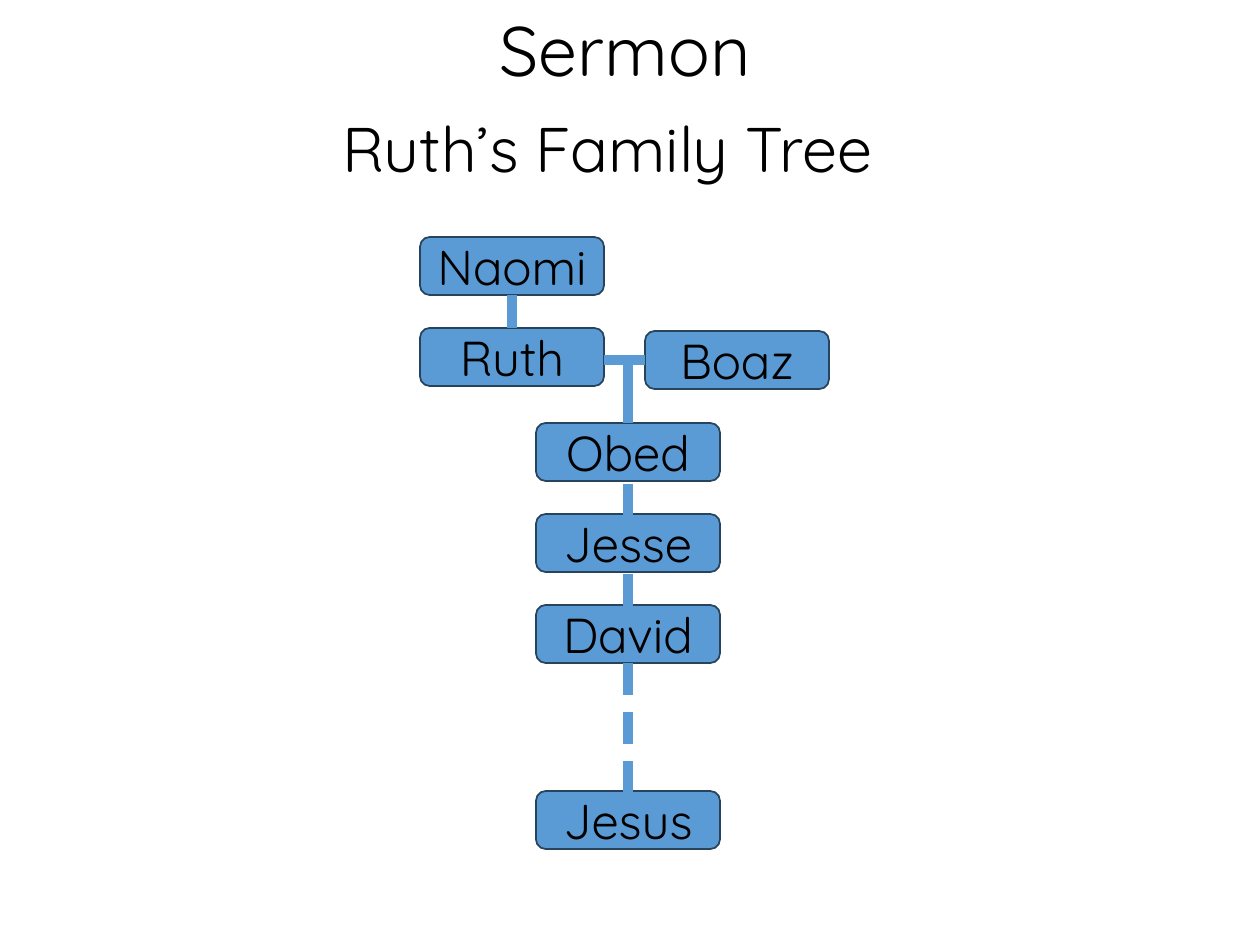
"""Build the sermon slide with Ruth's family tree."""
import pptx
import pptx.dml.color
import pptx.enum.shapes
import pptx.enum.text
import pptx.oxml
import pptx.util

PX = 914400 / 126
BLUE = pptx.dml.color.RGBColor(0x5B, 0x9B, 0xD5)
NAVY = pptx.dml.color.RGBColor(0x28, 0x44, 0x5D)
BLACK = pptx.dml.color.RGBColor(0, 0, 0)
MIDDLE = pptx.enum.text.MSO_ANCHOR.MIDDLE
CENTER = pptx.enum.text.PP_ALIGN.CENTER
LEFT = pptx.enum.text.PP_ALIGN.LEFT

TITLE = ("Sermon", (412, 1, 426, 105))
SUBTITLE = ("Ruth’s Family Tree", (330, 103, 592, 89))
PERSON_SIZE = (184, 58)
PEOPLE = {
    "Naomi": (420, 237),
    "Ruth": (420, 328),
    "Boaz": (645, 331),
    "Obed": (536, 423),
    "Jesse": (536, 514),
    "David": (536, 605),
    "Jesus": (536, 791),
}
DESCENT_X = 628
DESCENT = [(362, 423), (484, 516), (574, 606), (663, 695), (712, 744), (761, 793)]
NAOMI_TO_RUTH = (512, 295, 512, 328)
MARRIAGE = (604, 360, 645, 360)


def emu(*lengths):
    return [round(length * PX) for length in lengths]


def write(frame, words, size, align, **paragraph_format):
    frame.word_wrap = True
    frame.auto_size = pptx.enum.text.MSO_AUTO_SIZE.NONE
    frame.text = words
    paragraph = frame.paragraphs[0]
    for key, value in {"alignment": align, **paragraph_format}.items():
        setattr(paragraph, key, value)
    font = paragraph.runs[0].font
    for key, value in {"name": "Quicksand", "size": pptx.util.Pt(size)}.items():
        setattr(font, key, value)
    font.color.rgb = BLACK


def add_person(slide, name, corner):
    kind = pptx.enum.shapes.MSO_SHAPE.FLOWCHART_ALTERNATE_PROCESS
    person = slide.shapes.add_shape(kind, *emu(*corner, *PERSON_SIZE))
    person.shadow.inherit = False
    person.fill.solid()
    person.fill.fore_color.rgb = BLUE
    person.line.color.rgb = NAVY
    person.line.width = pptx.util.Pt(1)
    person.text_frame.vertical_anchor = MIDDLE
    write(person.text_frame, name, 28, CENTER)


def add_bond(slide, ends):
    straight = pptx.enum.shapes.MSO_CONNECTOR.STRAIGHT
    bond = slide.shapes.add_connector(straight, *emu(*ends))
    bond.line.color.rgb = BLUE
    bond.line.width = pptx.util.Pt(6)
    properties = bond.element.find(pptx.oxml.ns.qn("p:spPr"))
    properties.append(pptx.oxml.xmlchemy.OxmlElement("a:effectLst"))


def main():
    deck = pptx.Presentation()
    deck.slide_width, deck.slide_height = emu(1260, 945)
    slide = deck.slides.add_slide(deck.slide_layouts[5])

    words, place = TITLE
    title = slide.shapes.title
    for key, value in zip(("left", "top", "width", "height"), emu(*place)):
        setattr(title, key, value)
    title.text_frame.vertical_anchor = MIDDLE
    write(title.text_frame, words, 40, CENTER, line_spacing=0.9)

    for name, corner in PEOPLE.items():
        add_person(slide, name, corner)
    descent = [(DESCENT_X, top, DESCENT_X, bottom) for top, bottom in DESCENT]
    for ends in [NAOMI_TO_RUTH, MARRIAGE, *descent]:
        add_bond(slide, ends)

    words, place = SUBTITLE
    subtitle = slide.shapes.add_textbox(*emu(*place))
    write(subtitle.text_frame, words, 36, LEFT)

    deck.save("out.pptx")


if __name__ == "__main__":
    main()
